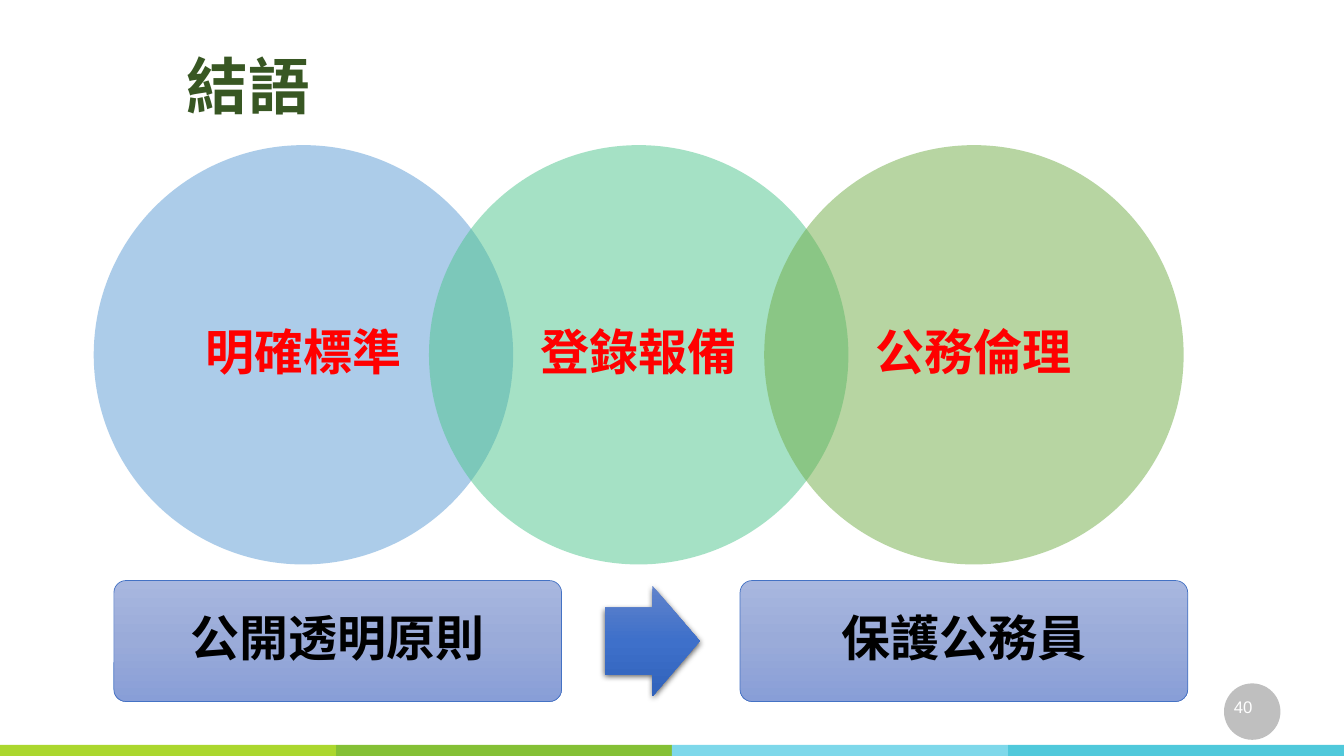
from copy import deepcopy

from pptx import Presentation
from pptx.dml.color import RGBColor
from pptx.enum import shapes, text
from pptx.oxml import parse_xml
from pptx.oxml.ns import nsdecls, qn
from pptx.util import Inches, Pt

CJK = "Noto Sans CJK SC"


def write(shape, wording, size, color, font=CJK, bold=True, align=text.PP_ALIGN.CENTER):
    """Put one formatted paragraph in a shape, with the font set for Latin and East Asian letters."""
    frame = shape.text_frame
    frame.word_wrap = True
    frame.text = wording
    paragraph = frame.paragraphs[0]
    paragraph.alignment = align
    run = paragraph.runs[0]
    run.font.size, run.font.bold, run.font.name = Pt(size), bold, font
    run.font.color.rgb = RGBColor.from_string(color)
    run.font._element.find(qn("a:latin")).addnext(
        parse_xml(f'<a:ea {nsdecls("a")} typeface="{font}"/>'))
    return frame


def add_filled(kind, left, top, width, height, *colors):
    """Add a shape without outline: one colour fills it flat, three fill it from top to bottom."""
    shape = slide.shapes.add_shape(
        kind, Inches(left), Inches(top), Inches(width), Inches(height))
    shape.shadow.inherit = False
    shape.line.fill.background()
    if len(colors) == 1:
        shape.fill.solid()
        shape.fill.fore_color.rgb = RGBColor.from_string(colors[0])
        return shape
    shape.fill.gradient()
    shape.fill.gradient_angle = 270
    first_stop = shape._element.spPr.find(".//" + qn("a:gs"))
    first_stop.addnext(deepcopy(first_stop))
    for stop, color, position in zip(shape.fill.gradient_stops, colors, (0, 0.5, 1)):
        stop.color.rgb = RGBColor.from_string(color)
        stop.position = position
    return shape


deck = Presentation()
deck.slide_width, deck.slide_height = Inches(13.33), Inches(7.5)
slide = deck.slides.add_slide(deck.slide_layouts[6])
kinds = shapes.MSO_SHAPE

# Footer band and page badge
band_width = 13.33 / 4
for i, color in enumerate(("ABD72E", "84C035", "7ED8EA", "50C9DB")):
    add_filled(kinds.RECTANGLE, i * band_width, 7.39, band_width, 0.11, color)
add_filled(kinds.OVAL, 12.14, 6.78, 0.56, 0.56, "BFBFBF")

# Title
title = slide.shapes.add_textbox(Inches(1.85), Inches(0.48), Inches(2.1), Inches(0.75))
title_frame = write(title, "結語", 44, "385723", align=text.PP_ALIGN.LEFT)
title_frame.margin_left = title_frame.margin_right = 0
title_frame.margin_top = title_frame.margin_bottom = 0

# Principle, arrow, result
for left, wording in ((1.13, "公開透明原則"), (7.34, "保護公務員")):
    box = add_filled(kinds.ROUNDED_RECTANGLE, left, 5.76, 4.44, 1.2,
                     "A8B7DF", "9AABD9", "889ED7")
    box.adjustments[0] = 0.1
    box.line.color.rgb = RGBColor.from_string("4472C4")
    box.line.width = Pt(0.5)
    frame = write(box, wording, 35, "000000")
    frame.vertical_anchor = text.MSO_ANCHOR.MIDDLE
    frame.paragraphs[0].line_spacing = 0.9

arrow = add_filled(kinds.RIGHT_ARROW, 6, 5.81, 0.94, 1.1, "6183CB", "3E70CA", "3062BB")
arrow.adjustments[0] = 0.6
arrow._element.spPr.find(qn("a:effectLst")).append(parse_xml(
    f'<a:outerShdw {nsdecls("a")} blurRad="57150" dist="19050" dir="5400000" '
    'algn="ctr" rotWithShape="0"><a:srgbClr val="000000"><a:alpha val="63000"/>'
    '</a:srgbClr></a:outerShdw>'))

# Overlapping circles
circles = (("明確標準", "5B9BD5"), ("登錄報備", "4DC58D"), ("公務倫理", "70AD47"))
for i, (wording, color) in enumerate(circles):
    circle = add_filled(kinds.OVAL, 0.93 + i * 3.325, 1.44, 4.16, 4.16, color)
    circle._element.spPr.find(qn("a:solidFill"))[0].append(
        parse_xml(f'<a:alpha {nsdecls("a")} val="50000"/>'))
    frame = write(circle, wording, 35, "FF0000")
    frame.vertical_anchor = text.MSO_ANCHOR.MIDDLE
    frame.paragraphs[0].line_spacing = 0.9

page_number = slide.shapes.add_textbox(Inches(12.14), Inches(6.86), Inches(0.56), Inches(0.4))
write(page_number, "40", 12, "FFFFFF", font="Arial", bold=False, align=text.PP_ALIGN.LEFT)

deck.save("out.pptx")
